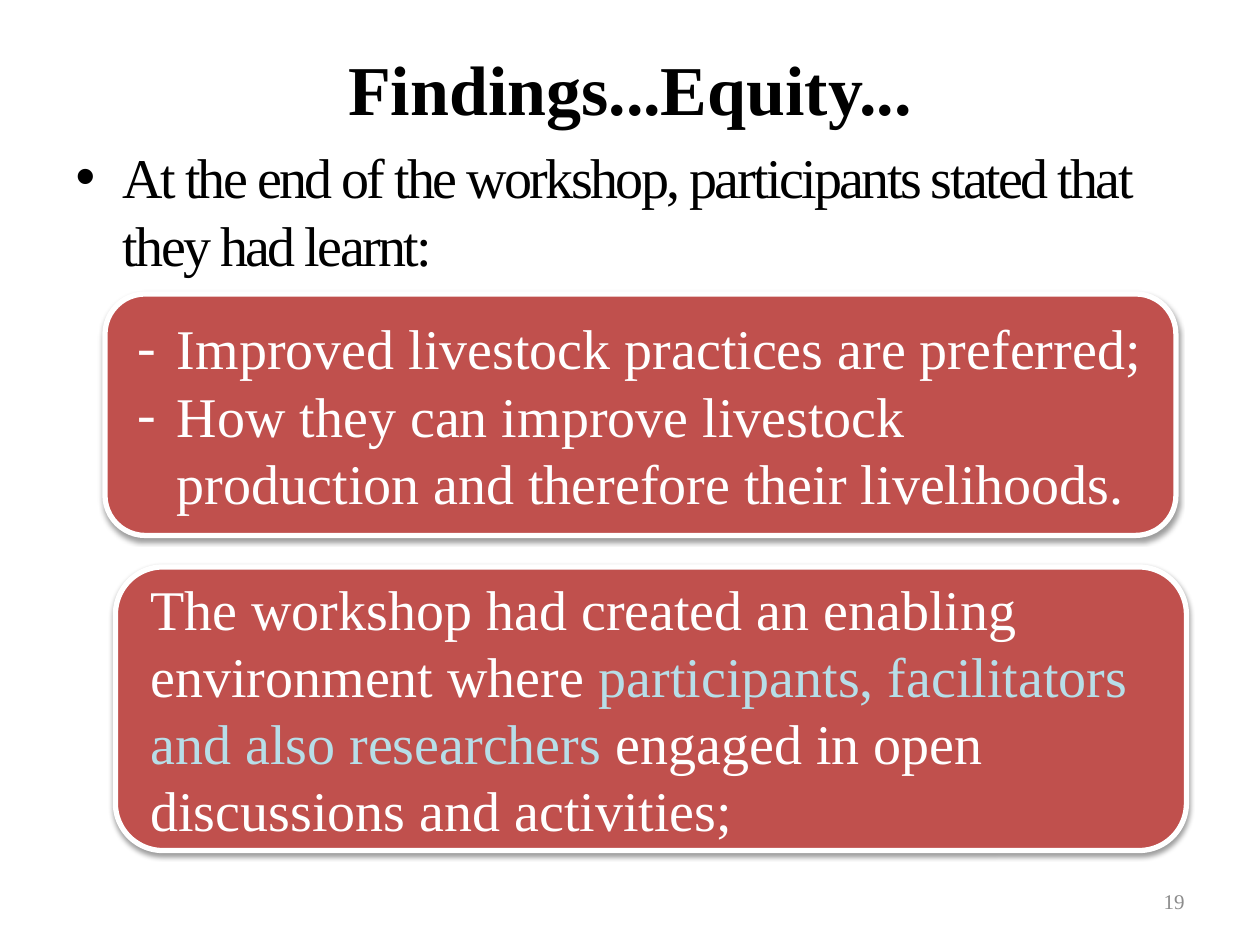
from lxml.etree import SubElement
from pptx import Presentation
from pptx.dml.color import RGBColor
from pptx.enum.shapes import MSO_SHAPE
from pptx.enum.text import MSO_ANCHOR, MSO_AUTO_SIZE, PP_ALIGN
from pptx.oxml.ns import qn
from pptx.util import Inches, Pt

BLACK = RGBColor(0x00, 0x00, 0x00)
WHITE = RGBColor(0xFF, 0xFF, 0xFF)
RED = RGBColor(0xC0, 0x50, 0x4D)
PALE_BLUE = RGBColor(0xB7, 0xDE, 0xE8)
GREY = RGBColor(0x8C, 0x8C, 0x8C)

COLS, ROWS = 120, 90  # grid of twelfths of an inch


class Deck:
    font = "Times New Roman"
    text_size = 32

    def __init__(self, width, height):
        self.prs = Presentation()
        self.prs.slide_width, self.prs.slide_height = Inches(width), Inches(height)
        self.s = self.prs.slides.add_slide(self.prs.slide_layouts[1])

    def box(self, col, row, cols, rows):
        """Turn a grid cell range into left, top, width, height."""
        w, h = self.prs.slide_width / COLS, self.prs.slide_height / ROWS
        return [round(v) for v in (col * w, row * h, cols * w, rows * h)]

    def format_run(self, r, color, size=text_size, bold=False):
        r.font.name, r.font.size, r.font.bold = self.font, Pt(size), bold
        r.font.color.rgb = color

    def place(self, sp, cells):
        sp.left, sp.top, sp.width, sp.height = self.box(*cells)
        sp.text_frame.auto_size = MSO_AUTO_SIZE.NONE

    def title(self, text, cells):
        sp = self.s.shapes.title
        self.place(sp, cells)
        sp.text_frame.text = text
        self.format_run(sp.text_frame.paragraphs[0].runs[0], BLACK, 40, True)

    def body(self, text, cells, spacing):
        sp = self.s.placeholders[1]
        self.place(sp, cells)
        sp.text_frame.text = text
        r = sp.text_frame.paragraphs[0].runs[0]
        self.format_run(r, BLACK)
        r.font._element.set("spc", str(round(spacing * 100)))

    def page_number(self, text, cells):
        tf = self.s.shapes.add_textbox(*self.box(*cells)).text_frame
        tf.word_wrap, tf.vertical_anchor = True, MSO_ANCHOR.MIDDLE
        tf.text = text
        p = tf.paragraphs[0]
        p.alignment = PP_ALIGN.RIGHT
        self.format_run(p.runs[0], GREY, 12)

    def panel(self, paragraphs, cells, margin, indent=0, bullet=None):
        """Rounded panel; each paragraph is a list of (text, color) runs."""
        sp = self.s.shapes.add_shape(MSO_SHAPE.ROUNDED_RECTANGLE, *self.box(*cells))
        sp.fill.solid()
        sp.fill.fore_color.rgb = RED
        sp.line.color.rgb, sp.line.width = WHITE, Pt(3)
        self.shadow(sp)
        tf = sp.text_frame
        tf.word_wrap, tf.vertical_anchor = True, MSO_ANCHOR.MIDDLE
        for i, runs in enumerate(paragraphs):
            p = tf.add_paragraph() if i else tf.paragraphs[0]
            p.alignment = PP_ALIGN.LEFT
            pPr = p._p.get_or_add_pPr()
            pPr.set("marL", str(Inches(margin)))
            pPr.set("indent", str(Inches(indent)))
            if bullet:
                SubElement(pPr, qn("a:buFont"), typeface=self.font)
                SubElement(pPr, qn("a:buChar"), char=bullet)
            for text, color in runs:
                r = p.add_run()
                r.text = text
                self.format_run(r, color)

    def shadow(self, sp):
        sp.shadow.inherit = False
        effects = sp._element.spPr.find(qn("a:effectLst"))
        outer = SubElement(effects, qn("a:outerShdw"), blurRad=str(Pt(3.1)),
                           dist=str(Pt(1.6)), dir="5400000", rotWithShape="0")
        color = SubElement(outer, qn("a:srgbClr"), val=str(BLACK))
        SubElement(color, qn("a:alpha"), val="38000")


def main():
    deck = Deck(10, 7.5)

    # Heading and lead-in
    deck.title("Findings...Equity...", (6, 3.6, 108, 9.4))
    deck.body("At the end of the workshop, participants stated that they had learnt:",
              (6, 13, 108, 61.7), spacing=-1.5)
    deck.page_number("19", (86, 83.4, 28, 4.8))

    # Lessons learnt
    deck.panel([[("Improved livestock practices are preferred;", WHITE)],
                [("How they can improve livestock production and therefore "
                  "their livelihoods.", WHITE)]],
               (10, 28, 102, 23), margin=0.38, indent=-0.31, bullet="-")

    # Enabling environment
    deck.panel([[("The workshop had created an enabling environment where ", WHITE),
                 ("participants, facilitators and also researchers ", PALE_BLUE),
                 ("engaged in open discussions and activities;", WHITE)]],
               (11, 54, 102, 27), margin=0.07)

    deck.prs.save("out.pptx")


if __name__ == "__main__":
    main()
